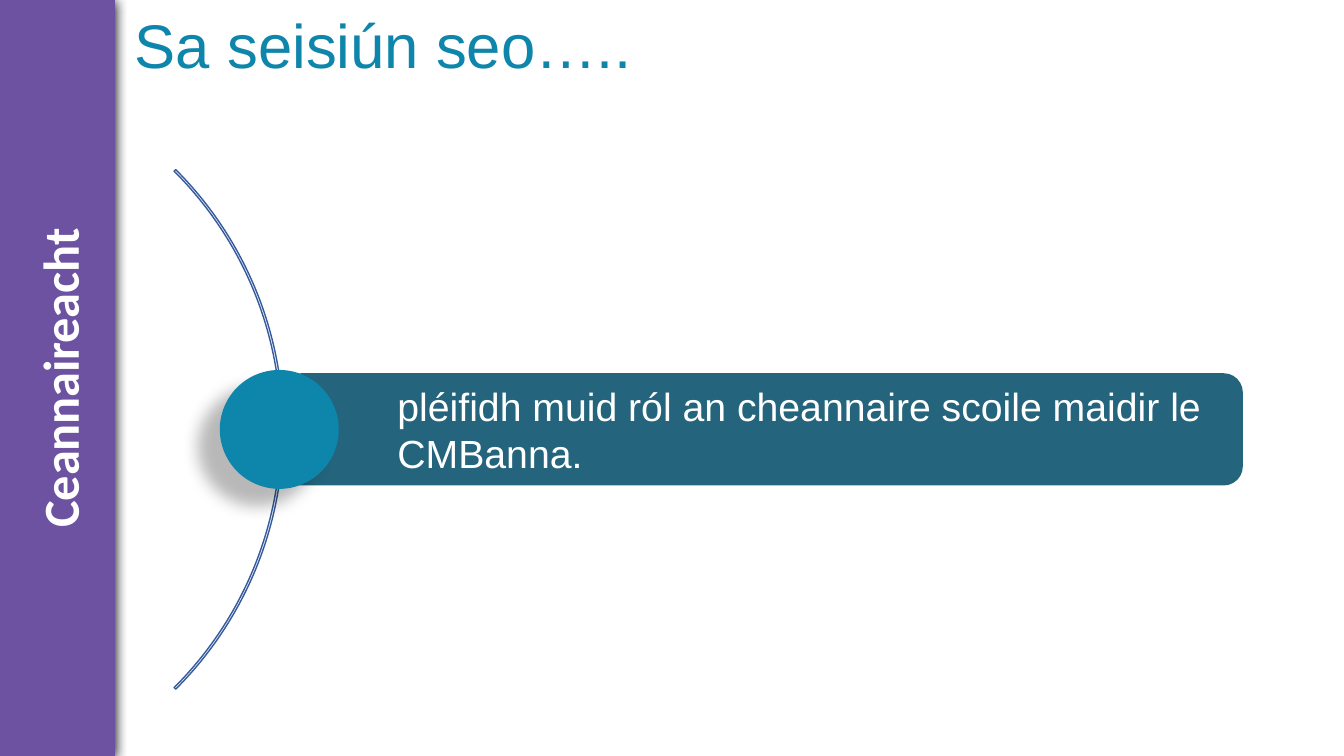
from lxml import etree
from pptx import Presentation
from pptx import util as u
from pptx.dml.color import RGBColor
from pptx.enum import shapes, text
from pptx.oxml.ns import qn

PURPLE, TEAL, DARK_TEAL = "6D52A1", "0E85AA", "24647C"
BLUE, WHITE, BLACK = "365B9D", "FFFFFF", "000000"


def color(value):
    """Turn a hex string into a colour."""
    return RGBColor.from_string(value)


def add_shape(slide, kind, box, fill=None, line=None):
    """Add a flat preset shape in a box given in inches."""
    shape = slide.shapes.add_shape(kind, *map(u.Inches, box))
    shape.shadow.inherit = False
    if fill:
        shape.fill.solid()
        shape.fill.fore_color.rgb = color(fill)
    else:
        shape.fill.background()
    if line:
        shape.line.color.rgb = color(line)
        shape.line.width = u.Pt(1)
    else:
        shape.line.fill.background()
    return shape


def add_shadow(shape, opacity, blur, distance, angle):
    """Give a shape an outer shadow, in percent, points and degrees."""
    effects = shape._element.spPr.find(qn("a:effectLst"))
    shadow = etree.SubElement(
        effects, qn("a:outerShdw"), blurRad=str(u.Pt(blur)),
        dist=str(u.Pt(distance)), dir=str(angle * 60000),
        algn="ctr", rotWithShape="0")
    tint = etree.SubElement(shadow, qn("a:srgbClr"), val=BLACK)
    etree.SubElement(tint, qn("a:alpha"), val=str(opacity * 1000))


def write(shape, words, size, fill, font="Arial", bold=False, spacing=1.0,
          align=text.PP_ALIGN.LEFT, anchor=text.MSO_ANCHOR.TOP,
          indent=0, inset=None, tracking=0):
    """Write one formatted paragraph into a shape."""
    frame = shape.text_frame
    frame.word_wrap = True
    frame.vertical_anchor = anchor
    if inset is not None:
        frame.margin_left = frame.margin_right = u.Inches(inset)
        frame.margin_top = frame.margin_bottom = u.Inches(inset)
    paragraph = frame.paragraphs[0]
    paragraph.alignment = align
    paragraph.line_spacing = spacing
    if indent:
        paragraph._p.get_or_add_pPr().set("marL", str(u.Inches(indent)))
    run = paragraph.add_run()
    run.text = words
    run.font.name, run.font.size, run.font.bold = font, u.Pt(size), bold
    run.font.color.rgb = color(fill)
    if tracking:
        run._r.get_or_add_rPr().set("spc", str(round(tracking * 100)))


def add_title(slide, box, words):
    """Place the slide title."""
    title = slide.shapes.add_textbox(*map(u.Inches, box))
    write(title, words, 44, TEAL, spacing=0.9)


def add_sidebar(slide, box, words):
    """Draw the side band with its label reading upwards."""
    left, top, width, height = box
    band = add_shape(slide, shapes.MSO_SHAPE.RECTANGLE, box, PURPLE)
    add_shadow(band, 100, 8.5, 1, 90)
    length, depth = 4.32, 0.6
    label = slide.shapes.add_textbox(
        u.Inches(left + (width - length) / 2),
        u.Inches(top + (height - depth) / 2),
        u.Inches(length), u.Inches(depth))
    label.rotation = 270
    write(label, words, 36, WHITE, font="Calibri", bold=True, spacing=1.02,
          align=text.PP_ALIGN.CENTER, inset=0, tracking=-0.1)


def add_topic(slide, box, words):
    """Draw the topic bar, the arc that meets it and the disc on the joint."""
    left, top, width, height = box
    middle = top + height / 2
    bar = add_shape(slide, shapes.MSO_SHAPE.ROUNDED_RECTANGLE, box,
                    DARK_TEAL, DARK_TEAL)
    write(bar, words, 28, WHITE, anchor=text.MSO_ANCHOR.MIDDLE, indent=0.98)

    ring = 7.29
    arc = add_shape(slide, shapes.MSO_SHAPE.BLOCK_ARC,
                    (left - ring, middle - ring / 2, ring, ring), line=BLUE)
    for index, value in enumerate((189, 27, 0.003)):
        arc.adjustments[index] = value

    disc = 1.18
    joint = add_shape(slide, shapes.MSO_SHAPE.OVAL,
                      (left - 0.63, middle - disc / 2, disc, disc), TEAL)
    add_shadow(joint, 28, 11.8, 19.7, 141)


def main():
    """Build the session slide and save it."""
    presentation = Presentation()
    presentation.slide_width = u.Inches(13.33)
    presentation.slide_height = u.Inches(7.5)
    slide = presentation.slides.add_slide(presentation.slide_layouts[6])
    add_title(slide, (1.24, 0.1, 11.5, 1.45), "Sa seisiún seo…..")
    add_sidebar(slide, (0, 0, 1.14, 7.5), "Ceannaireacht")
    add_topic(slide, (2.81, 3.71, 9.51, 1.1),
              "pléifidh muid ról an cheannaire scoile maidir le CMBanna.")
    presentation.save("out.pptx")


if __name__ == "__main__":
    main()
